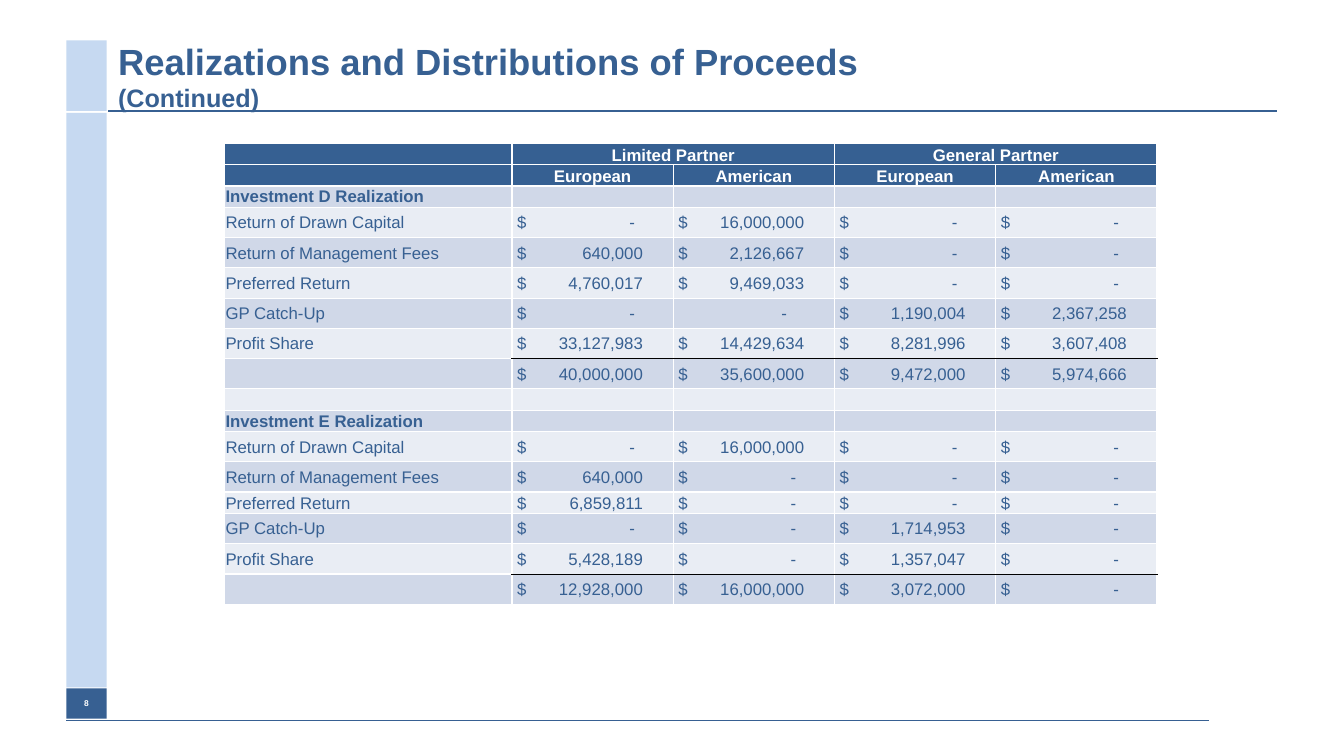
from dataclasses import dataclass

import lxml.etree
import pptx
import pptx.dml.color
import pptx.enum.shapes
import pptx.enum.text
import pptx.oxml.ns
import pptx.util

EMU_PER_PX = 3810  # 240 px to the inch


@dataclass(frozen=True)
class Theme:
    font: str = "Arial"
    blue: str = "376092"
    header: str = "366092"
    pale_blue: str = "C6D9F1"
    bands: tuple = ("D0D8E8", "E9EDF4")
    white: str = "FFFFFF"
    black: str = "000000"
    title_size: int = 26
    subtitle_size: int = 18
    table_size: int = 12
    number_size: int = 6


THEME = Theme()

# Table content: a label, then European and American amounts for each partner
HEADERS = [
    ["", "Limited Partner", "", "General Partner", ""],
    ["", "European", "American", "European", "American"],
]
REALIZATIONS = [
    ["Investment D Realization", "", "", "", ""],
    ["Return of Drawn Capital", "$\t-", "$\t16,000,000", "$\t-", "$\t-"],
    ["Return of Management Fees", "$\t640,000", "$\t2,126,667", "$\t-", "$\t-"],
    ["Preferred Return", "$\t4,760,017", "$\t9,469,033", "$\t-", "$\t-"],
    ["GP Catch-Up", "$\t-", "\t-", "$\t1,190,004", "$\t2,367,258"],
    ["Profit Share", "$\t33,127,983", "$\t14,429,634", "$\t8,281,996", "$\t3,607,408"],
    ["", "$\t40,000,000", "$\t35,600,000", "$\t9,472,000", "$\t5,974,666"],
    ["", "", "", "", ""],
    ["Investment E Realization", "", "", "", ""],
    ["Return of Drawn Capital", "$\t-", "$\t16,000,000", "$\t-", "$\t-"],
    ["Return of Management Fees", "$\t640,000", "$\t-", "$\t-", "$\t-"],
    ["Preferred Return", "$\t6,859,811", "$\t-", "$\t-", "$\t-"],
    ["GP Catch-Up", "$\t-", "$\t-", "$\t1,714,953", "$\t-"],
    ["Profit Share", "$\t5,428,189", "$\t-", "$\t1,357,047", "$\t-"],
    ["", "$\t12,928,000", "$\t16,000,000", "$\t3,072,000", "$\t-"],
]
COLUMN_WIDTHS = [684] + [384] * 4
SHORT_ROW, TALL_ROW = 51, 72
SHORT_ROWS = {0, 1, 2, 9, 10, 13}
AMOUNT_TAB, DASH_TAB, BARE_DASH_TAB = 300, 281, 259
AMOUNT_INSET, CELL_INSET = 12, 2


def px(length):
    return pptx.util.Emu(length * EMU_PER_PX)


def rgb(color):
    return pptx.dml.color.RGBColor.from_string(color)


def format_runs(paragraph, size, color, bold):
    for run in paragraph.runs:
        run.font.name = THEME.font
        run.font.size = pptx.util.Pt(size)
        run.font.bold = bold
        run.font.color.rgb = rgb(color)


def add_child(parent, tag, **attributes):
    return lxml.etree.SubElement(parent, pptx.oxml.ns.qn(tag), attributes)


def add_bar(slide, left, top, width, height, color):
    bar = slide.shapes.add_shape(
        pptx.enum.shapes.MSO_SHAPE.RECTANGLE, px(left), px(top), px(width), px(height))
    bar.shadow.inherit = False
    bar.fill.solid()
    bar.fill.fore_color.rgb = rgb(color)
    bar.line.fill.background()
    return bar


def add_rule(slide, left, right, top, weight):
    rule = slide.shapes.add_connector(
        pptx.enum.shapes.MSO_CONNECTOR.STRAIGHT, px(left), px(top), px(right), px(top))
    rule.line.color.rgb = rgb(THEME.blue)
    rule.line.width = pptx.util.Pt(weight)
    add_child(rule._element.spPr, "a:effectLst")


def add_page_number(slide, number):
    box = add_bar(slide, 158, 1639, 96, 72, THEME.blue)
    box.text_frame.text = number
    box.text_frame.vertical_anchor = pptx.enum.text.MSO_ANCHOR.MIDDLE
    paragraph = box.text_frame.paragraphs[0]
    paragraph.alignment = pptx.enum.text.PP_ALIGN.CENTER
    format_runs(paragraph, THEME.number_size, THEME.white, True)


def set_title(slide, heading, subtitle):
    title = slide.shapes.title
    title.left, title.top, title.width, title.height = px(257), px(96), px(2779), px(168)
    frame = title.text_frame
    frame.text = f"{heading}\n{subtitle}"
    frame.auto_size = pptx.enum.text.MSO_AUTO_SIZE.NONE
    frame.vertical_anchor = pptx.enum.text.MSO_ANCHOR.MIDDLE
    for paragraph, size in zip(frame.paragraphs, (THEME.title_size, THEME.subtitle_size)):
        paragraph.alignment = pptx.enum.text.PP_ALIGN.LEFT
        format_runs(paragraph, size, THEME.blue, True)


def set_borders(cell, black_side):
    properties = cell._tc.get_or_add_tcPr()
    for index, side in enumerate(("lnL", "lnR", "lnT", "lnB")):
        is_black = side == black_side
        weight = pptx.util.Pt(0.5 if is_black else 1)
        border = add_child(properties, f"a:{side}", w=str(weight))
        fill = add_child(border, "a:solidFill")
        add_child(fill, "a:srgbClr", val=THEME.black if is_black else THEME.white)
        properties.insert(index, border)


def add_tab(paragraph, text):
    if text.endswith("-"):
        position = DASH_TAB if text.startswith("$") else BARE_DASH_TAB
    else:
        position = AMOUNT_TAB
    tabs = add_child(paragraph._p.get_or_add_pPr(), "a:tabLst")
    add_child(tabs, "a:tab", pos=str(px(position)), algn="r")


def fill_cell(cell, text, fill, color, bold, is_header, black_side):
    is_amount = "\t" in text
    cell.margin_left = px(AMOUNT_INSET if is_amount else CELL_INSET)
    cell.margin_right = cell.margin_top = px(CELL_INSET)
    cell.margin_bottom = 0
    anchors = pptx.enum.text.MSO_ANCHOR
    cell.vertical_anchor = anchors.BOTTOM if is_header else anchors.MIDDLE
    cell.fill.solid()
    cell.fill.fore_color.rgb = rgb(fill)
    set_borders(cell, black_side)

    paragraph = cell.text_frame.paragraphs[0]
    if is_header:
        paragraph.alignment = pptx.enum.text.PP_ALIGN.CENTER
    if is_amount:
        add_tab(paragraph, text)
    if text:
        paragraph.text = text
        format_runs(paragraph, THEME.table_size, color, bold)
    else:
        # Keeps empty rows as low as the text rows
        add_child(paragraph._p, "a:endParaRPr", sz=str(THEME.table_size * 100))


def add_proceeds_table(slide):
    rows = HEADERS + REALIZATIONS
    heights = [SHORT_ROW if index in SHORT_ROWS else TALL_ROW for index in range(len(rows))]
    frame = slide.shapes.add_table(
        len(rows), len(COLUMN_WIDTHS), px(535), px(341), px(sum(COLUMN_WIDTHS)), px(sum(heights)))
    table = frame.table
    for column, width in zip(table.columns, COLUMN_WIDTHS):
        column.width = px(width)

    for row_index, texts in enumerate(rows):
        table.rows[row_index].height = px(heights[row_index])
        is_header = row_index < len(HEADERS)
        fill = THEME.header if is_header else THEME.bands[row_index % 2]
        color = THEME.white if is_header else THEME.blue
        bold = is_header or texts[0].startswith("Investment")
        # A black rule parts each profit share from its total
        is_total = rows[row_index - 1][0] == "Profit Share"
        black_side = "lnB" if texts[0] == "Profit Share" else "lnT" if is_total else None
        for column_index, text in enumerate(texts):
            fill_cell(table.cell(row_index, column_index), text, fill, color, bold,
                      is_header, black_side if column_index else None)

    # Partner headings span two columns each
    for first in (1, 3):
        table.cell(0, first).merge(table.cell(0, first + 1))


def main():
    presentation = pptx.Presentation()
    presentation.slide_width, presentation.slide_height = px(3200), px(1800)
    slide = presentation.slides.add_slide(presentation.slide_layouts[5])

    # Side bars and rules
    add_rule(slide, 158, 2878, 1716, 0.75)
    add_bar(slide, 158, 269, 96, 1368, THEME.pale_blue)
    add_bar(slide, 158, 96, 96, 168, THEME.pale_blue)
    add_rule(slide, 257, 3041, 264, 1)

    # Content
    add_page_number(slide, "8")
    set_title(slide, "Realizations and Distributions of Proceeds", "(Continued)")
    add_proceeds_table(slide)
    presentation.save("out.pptx")


if __name__ == "__main__":
    main()
